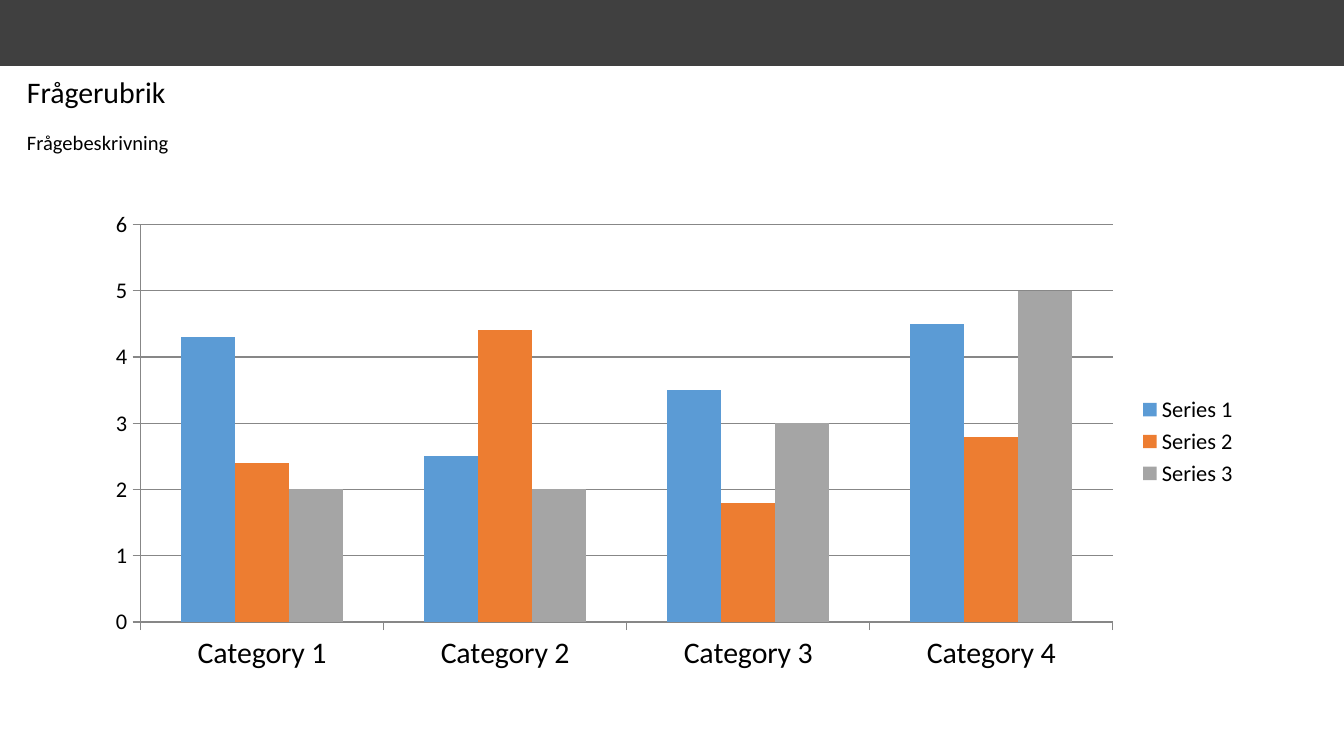
from pptx import Presentation
from pptx.chart.data import CategoryChartData
from pptx.dml.color import RGBColor
from pptx.enum.chart import XL_CHART_TYPE, XL_LEGEND_POSITION, XL_TICK_MARK
from pptx.enum.shapes import MSO_SHAPE
from pptx.enum.text import MSO_ANCHOR, MSO_AUTO_SIZE, PP_ALIGN
from pptx.util import Inches, Pt

WIDE = 10
HIGH = WIDE * 9 / 16
FONT, INK, GREY = "Calibri", "000000", "878787"
CATS = [f"Category {n}" for n in range(1, 5)]
SERIES = [
    ("Series 1", "5B9BD5", (4.3, 2.5, 3.5, 4.5)),
    ("Series 2", "ED7D31", (2.4, 4.4, 1.8, 2.8)),
    ("Series 3", "A5A5A5", (2, 2, 3, 5)),
]


def color(code):
    return RGBColor.from_string(code)


def paint(fill, code):
    fill.solid()
    fill.fore_color.rgb = color(code)


def style(font, size):
    font.name, font.size = FONT, Pt(size)
    font.color.rgb = color(INK)


def place(shape, box):
    shape.left, shape.top, shape.width, shape.height = map(Inches, box)


def add_band(slide, box):
    band = slide.shapes.add_shape(MSO_SHAPE.RECTANGLE, *map(Inches, box))
    band.shadow.inherit = False
    paint(band.fill, "404040")
    band.line.fill.background()


def write(shape, box, text, size, side):
    """Fill one heading line, centred vertically in its box."""
    place(shape, box)
    frame = shape.text_frame
    frame.word_wrap = True
    frame.auto_size = MSO_AUTO_SIZE.NONE
    frame.vertical_anchor = MSO_ANCHOR.MIDDLE
    frame.margin_left = frame.margin_right = Inches(side)
    frame.margin_top = frame.margin_bottom = Inches(0.04)
    line = frame.paragraphs[0]
    line.text = text
    line.alignment = PP_ALIGN.LEFT
    line.line_spacing = 0.9
    style(line.font, size)


def add_bars(slide, box):
    data = CategoryChartData()
    data.categories = CATS
    for name, _, vals in SERIES:
        data.add_series(name, vals)
    chart = slide.shapes.add_chart(
        XL_CHART_TYPE.COLUMN_CLUSTERED, *map(Inches, box), data).chart
    style(chart.font, 18)
    chart.has_title = False
    chart.has_legend = True
    chart.legend.position = XL_LEGEND_POSITION.RIGHT
    chart.legend.include_in_layout = False
    style(chart.legend.font, 12)

    plot = chart.plots[0]
    plot.gap_width, plot.overlap = 150, 0
    plot.vary_by_categories = False
    for bars, (_, code, _) in zip(plot.series, SERIES):
        paint(bars.format.fill, code)

    for axis, size in ((chart.category_axis, 16), (chart.value_axis, 12)):
        axis.major_tick_mark = XL_TICK_MARK.OUTSIDE
        axis.minor_tick_mark = XL_TICK_MARK.NONE
        style(axis.tick_labels.font, size)
        axis.format.line.color.rgb = color(GREY)
    scale = chart.value_axis
    scale.minimum_scale, scale.maximum_scale, scale.major_unit = 0, 6, 1
    scale.has_major_gridlines = True
    scale.major_gridlines.format.line.color.rgb = color(GREY)


def main():
    deck = Presentation()
    deck.slide_width, deck.slide_height = Inches(WIDE), Inches(HIGH)
    slide = deck.slides.add_slide(deck.slide_layouts[5])
    add_band(slide, (0, 0, WIDE, 0.49))
    write(slide.shapes.title, (0.1, 0.54, 9.18, 0.32), "Frågerubrik", 16, 0.1)
    add_bars(slide, (0.69, 1.5, 8.62, 3.57))
    note = slide.shapes.add_textbox(0, 0, 0, 0)
    write(note, (0.13, 0.91, 9.18, 0.32), "Frågebeskrivning", 11, 0.07)
    deck.save("out.pptx")


if __name__ == "__main__":
    main()
